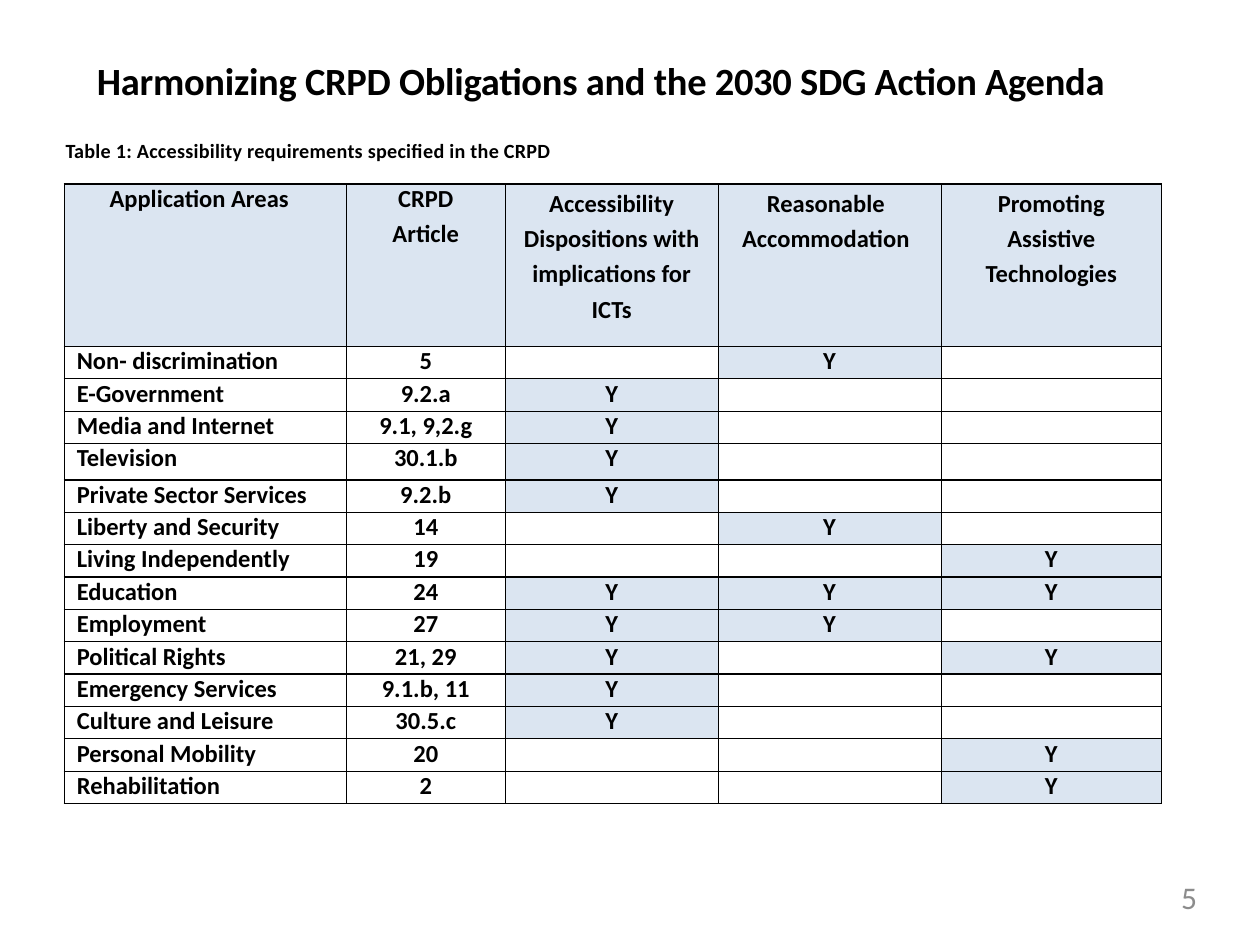
"""Build the slide on accessibility requirements in the CRPD."""
from dataclasses import dataclass

import lxml.etree
import pptx
import pptx.dml.color
import pptx.enum.text
import pptx.oxml.ns
import pptx.util

Inches = pptx.util.Inches
Pt = pptx.util.Pt
qn = pptx.oxml.ns.qn
Align = pptx.enum.text.PP_ALIGN

HUES = {"ink": "000000", "tint": "DBE5F1", "gray": "8C8C8C"}


@dataclass
class Style:
    size: float
    bold: bool = True
    hue: str = "ink"
    align: Align = Align.LEFT
    track: int = 0


@dataclass
class Label:
    text: str
    left: float
    top: float
    width: float
    height: float
    style: Style


@dataclass
class Head:
    text: str
    width: float
    left: float
    right: float
    align: Align = Align.CENTER
    lead: float = 1.0
    gap: float = 0


@dataclass
class Area:
    name: str
    code: str
    marks: str


LABELS = [
    Label("Harmonizing CRPD Obligations and the 2030 SDG Action Agenda",
          0.77, 0.45, 8.84, 0.33, Style(22, track=-15)),
    Label("Table 1: Accessibility requirements specified in the CRPD",
          0.52, 1.1, 3.95, 0.19, Style(11.5, track=13)),
    Label("5", 7.2, 6.97, 2.3, 0.38, Style(18, False, "gray", Align.RIGHT)),
]
HEADS = [
    Head("Application Areas", 2.24, 0.36, 0, Align.LEFT),
    Head("CRPD\nArticle", 1.26, 0, 0, gap=3),
    Head("Accessibility Dispositions with implications for ICTs",
         1.69, 0.11, 0.11, lead=1.18),
    Head("Reasonable Accommodation", 1.77, 0.16, 0.22, lead=1.18),
    Head("Promoting Assistive Technologies", 1.75, 0.31, 0.31, lead=1.18),
]
AREAS = [
    Area("Non- discrimination", "5", "-Y-"),
    Area("E-Government", "9.2.a", "Y--"),
    Area("Media and Internet", "9.1, 9,2.g", "Y--"),
    Area("Television", "30.1.b", "Y--"),
    Area("Private Sector Services", "9.2.b", "Y--"),
    Area("Liberty and Security", "14", "-Y-"),
    Area("Living Independently", "19", "--Y"),
    Area("Education", "24", "YYY"),
    Area("Employment", "27", "YY-"),
    Area("Political Rights", "21, 29", "Y-Y"),
    Area("Emergency Services", "9.1.b, 11", "Y--"),
    Area("Culture and Leisure", "30.5.c", "Y--"),
    Area("Personal Mobility", "20", "--Y"),
    Area("Rehabilitation", "2", "--Y"),
]
TALL = {0: 1.29, 4: 0.29}
HIGH = 4.92


def color(name: str) -> pptx.dml.color.RGBColor:
    """Return the named colour."""
    return pptx.dml.color.RGBColor.from_string(HUES[name])


def write(frame, text: str, style: Style) -> None:
    """Fill a text frame with evenly styled paragraphs."""
    frame.text = text
    frame.word_wrap = True
    for para in frame.paragraphs:
        para.alignment = style.align
        font = para.font
        font.name, font.size, font.bold = "Calibri", Pt(style.size), style.bold
        font.color.rgb = color(style.hue)
        if style.track:
            para._p.pPr.find(qn("a:defRPr")).set("spc", str(style.track))


def pad(item, left: float = 0, right: float = 0) -> None:
    """Set the inner margins of a cell or text frame."""
    item.margin_left, item.margin_right = Inches(left), Inches(right)
    item.margin_top = item.margin_bottom = 0


def draw_label(slide, label: Label) -> None:
    """Draw one free line of text."""
    box = slide.shapes.add_textbox(Inches(label.left), Inches(label.top),
                                   Inches(label.width), Inches(label.height))
    pad(box.text_frame)
    write(box.text_frame, label.text, label.style)


def edge(cell) -> None:
    """Rule all four sides of a cell."""
    props = cell._tc.get_or_add_tcPr()
    for side in ("lnL", "lnR", "lnT", "lnB"):
        line = lxml.etree.SubElement(props, qn(f"a:{side}"), w=str(int(Pt(0.75))))
        fill = lxml.etree.SubElement(line, qn("a:solidFill"))
        lxml.etree.SubElement(fill, qn("a:srgbClr"), val=HUES["ink"])


def draw_cell(cell, text: str, align: Align, tint: bool,
              left: float = 0, right: float = 0) -> None:
    """Write, rule and fill one cell."""
    pad(cell, left, right)
    write(cell.text_frame, text, Style(14, align=align))
    edge(cell)
    if tint:
        cell.fill.solid()
        cell.fill.fore_color.rgb = color("tint")
    else:
        cell.fill.background()


def draw_table(slide) -> None:
    """Draw the table of areas and requirements."""
    count = len(AREAS) + 1
    wide = sum(head.width for head in HEADS)
    table = slide.shapes.add_table(count, len(HEADS), Inches(0.51), Inches(1.46),
                                   Inches(wide), Inches(HIGH)).table
    table.first_row = table.horz_banding = False
    step = (HIGH - sum(TALL.values())) / (count - len(TALL))
    for num, row in enumerate(table.rows):
        row.height = Inches(TALL.get(num, step))
    for col, head in enumerate(HEADS):
        table.columns[col].width = Inches(head.width)
        cell = table.cell(0, col)
        draw_cell(cell, head.text, head.align, True, head.left, head.right)
        for num, para in enumerate(cell.text_frame.paragraphs):
            para.line_spacing = head.lead
            para.space_before = Pt(head.gap * num)
    for num, area in enumerate(AREAS, 1):
        draw_cell(table.cell(num, 0), area.name, Align.LEFT, False, 0.1)
        draw_cell(table.cell(num, 1), area.code, Align.CENTER, False)
        for col, mark in enumerate(area.marks, 2):
            draw_cell(table.cell(num, col), mark.strip("-"), Align.CENTER, mark == "Y")


def main() -> None:
    """Build and save the slide."""
    deck = pptx.Presentation()
    deck.slide_width, deck.slide_height = Inches(10), Inches(7.5)
    slide = deck.slides.add_slide(deck.slide_layouts[6])
    for label in LABELS:
        draw_label(slide, label)
    draw_table(slide)
    deck.save("out.pptx")


if __name__ == "__main__":
    main()
